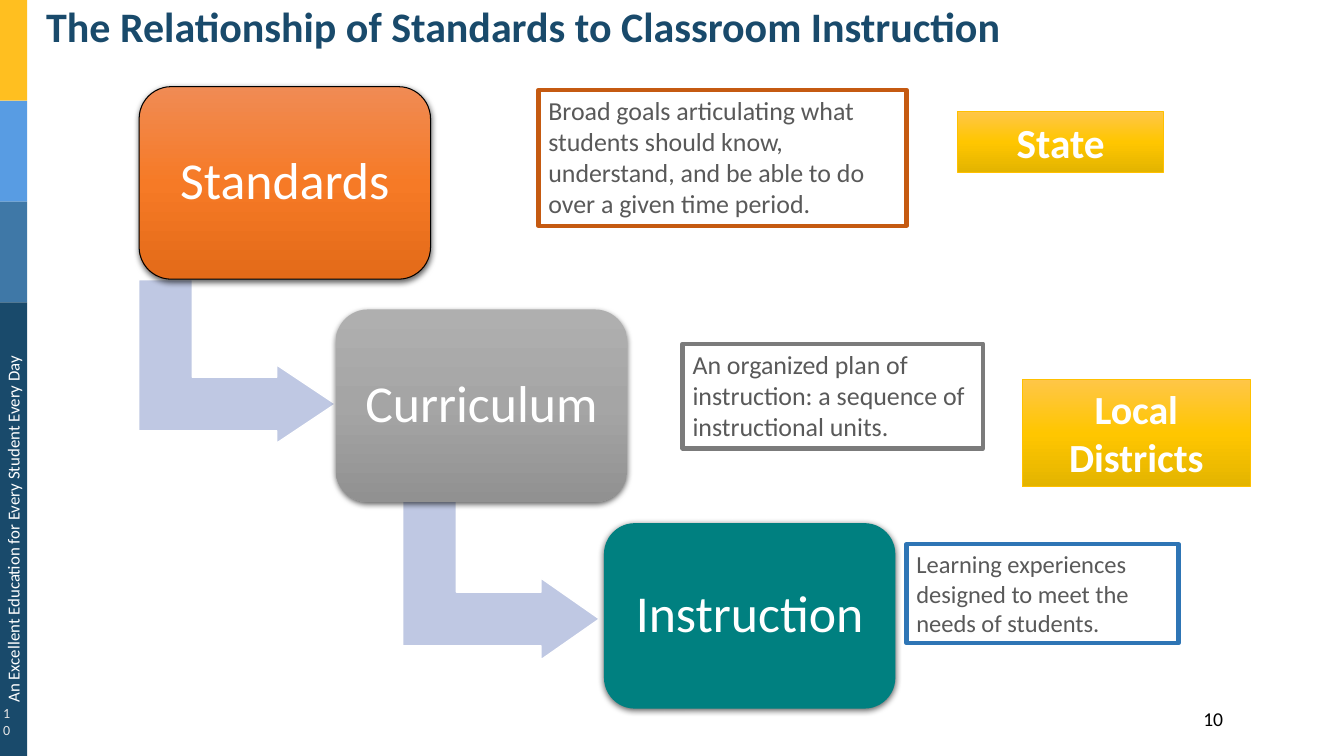
"""Build a slide relating standards, curriculum and instruction to those who set them."""
from copy import deepcopy
from dataclasses import dataclass

from lxml import etree
from pptx import Presentation
from pptx.dml.color import RGBColor
from pptx.enum.shapes import MSO_SHAPE
from pptx.enum.text import MSO_ANCHOR, PP_ALIGN
from pptx.oxml.ns import qn
from pptx.util import Emu, Pt

RECTANGLE = MSO_SHAPE.RECTANGLE
ROUNDED = MSO_SHAPE.ROUNDED_RECTANGLE
BENT_ARROW = MSO_SHAPE.BENT_UP_ARROW
LEFT, CENTER, RIGHT = PP_ALIGN.LEFT, PP_ALIGN.CENTER, PP_ALIGN.RIGHT
TOP, MIDDLE = MSO_ANCHOR.TOP, MSO_ANCHOR.MIDDLE
PX = 9144


@dataclass(frozen=True)
class Theme:
    font: str = "Calibri"
    navy: str = "194A6B"
    steel: str = "3F78A7"
    sky: str = "589CE3"
    amber: str = "FFBF20"
    white: str = "FFFFFF"
    black: str = "000000"
    pale: str = "E7E6E6"
    text: str = "595959"
    arrow: str = "BFC8E3"
    orange: tuple = ("F08B54", "F67A26", "E36A18")
    gray: tuple = ("AFAFAF", "A5A5A5", "919191")
    gold: tuple = ("FFC647", "FFC600", "E3B400")
    teal: str = "008080"
    gold_line: str = "FFC000"
    orange_line: str = "C55A11"
    gray_line: str = "7B7B7B"
    blue_line: str = "2E75B5"
    title_size: float = 30
    step_size: float = 37
    note_size: float = 18.5
    small_note_size: float = 17.5
    state_size: float = 29.5
    district_size: float = 28.5
    number_size: float = 14
    motto_size: float = 12
    side_number_size: float = 10


THEME = Theme()


def add_box(kind, bounds, fill=None, line=None, line_width=1):
    box = page.shapes.add_shape(kind, *(Emu(value * PX) for value in bounds))
    box.shadow.inherit = False
    if fill is None:
        box.fill.background()
    elif isinstance(fill, tuple):
        box.fill.gradient()
        box.fill.gradient_angle = 270
        stop_list = next(box._element.spPr.iter(qn("a:gsLst")))
        stop_list.insert(1, deepcopy(stop_list[0]))
        for index, stop in enumerate(box.fill.gradient_stops):
            stop.position = index / 2
            stop.color.rgb = RGBColor.from_string(fill[index])
    else:
        box.fill.solid()
        box.fill.fore_color.rgb = RGBColor.from_string(fill)
    if line is None:
        box.line.fill.background()
    else:
        box.line.color.rgb = RGBColor.from_string(line)
        box.line.width = Pt(line_width)
    return box


def write(box, text, size, color, align=LEFT, anchor=TOP, bold=False, spacing=1.0):
    frame = box.text_frame
    frame.word_wrap = True
    frame.vertical_anchor = anchor
    frame.margin_left = frame.margin_right = Emu(10 * PX)
    frame.margin_top = frame.margin_bottom = Emu(5 * PX)
    frame.text = text
    para = frame.paragraphs[0]
    para.alignment = align
    para.line_spacing = spacing
    font = para.runs[0].font
    font.name = THEME.font
    font.size = Pt(size)
    font.bold = bold
    font.color.rgb = RGBColor.from_string(color)


deck = Presentation()
deck.slide_width, deck.slide_height = Emu(1333 * PX), Emu(750 * PX)
page = deck.slides.add_slide(deck.slide_layouts[6])

side_bands = [
    (0, 100, THEME.amber),
    (100, 100, THEME.sky),
    (200, 100, THEME.steel),
    (300, 450, THEME.navy),
]
for top, height, color in side_bands:
    add_box(RECTANGLE, (0, top, 27, height), color)

arrows = [((154, 261, 162, 195), 0.239), ((416, 476, 162, 195), 0.25)]
for bounds, head in arrows:
    arrow = add_box(BENT_ARROW, bounds, THEME.arrow, THEME.white)
    arrow.rotation = 90
    for index, value in enumerate((0.328, head, 0.358)):
        arrow.adjustments[index] = value

steps = [
    ("Standards", (138, 86, 289, 191), THEME.orange, THEME.black),
    ("Curriculum", (333, 307, 289, 191), THEME.gray, None),
    ("Instruction", (599, 519, 289, 184), THEME.teal, None),
]
for name, bounds, fill, line in steps:
    step = add_box(ROUNDED, bounds, fill, line, 0.75)
    write(step, name, THEME.step_size, THEME.white, CENTER, MIDDLE, spacing=0.9)
    effects = step._element.spPr.find(qn("a:effectLst"))
    shadow = etree.SubElement(
        effects, qn("a:outerShdw"), blurRad="57150", dist="19050",
        dir="5400000", algn="ctr", rotWithShape="0")
    shade = etree.SubElement(shadow, qn("a:srgbClr"), val=THEME.black)
    etree.SubElement(shade, qn("a:alpha"), val="62000")

notes = [
    ("Broad goals articulating what students should know, understand, "
     "and be able to do over a given time period.",
     (534, 89, 365, 135), THEME.orange_line, THEME.note_size),
    ("An organized plan of instruction: a sequence of instructional units.",
     (677, 341, 298, 104), THEME.gray_line, THEME.note_size),
    ("Learning experiences designed to meet the needs of students.",
     (899, 540, 270, 98), THEME.blue_line, THEME.small_note_size),
]
for text, bounds, line, size in notes:
    write(add_box(RECTANGLE, bounds, None, line, 3), text, size, THEME.text)

owners = [
    ("State", (950, 111, 204, 60), THEME.state_size),
    ("Local Districts", (1014, 377, 226, 106), THEME.district_size),
]
for text, bounds, size in owners:
    owner = add_box(RECTANGLE, bounds, THEME.gold, THEME.gold_line, 0.75)
    write(owner, text, size, THEME.white, CENTER, bold=True)

labels = [
    ("The Relationship of Standards to Classroom Instruction", (36, -17, 1240, 92), 0,
     dict(size=THEME.title_size, color=THEME.navy, anchor=MIDDLE, bold=True, spacing=0.9)),
    ("An Excellent Education for Every Student Every Day", (-212, 510, 450, 30), 270,
     dict(size=THEME.motto_size, color=THEME.white, align=CENTER)),
    ("10", (1138, 696, 85, 34), 0,
     dict(size=THEME.number_size, color=THEME.black, align=RIGHT)),
    ("10", (0, 702, 20, 27), 0,
     dict(size=THEME.side_number_size, color=THEME.pale, align=RIGHT, anchor=MIDDLE)),
]
for text, bounds, rotation, style in labels:
    label = page.shapes.add_textbox(*(Emu(value * PX) for value in bounds))
    label.rotation = rotation
    write(label, text, **style)
label.text_frame.margin_left = 0

deck.save("out.pptx")
